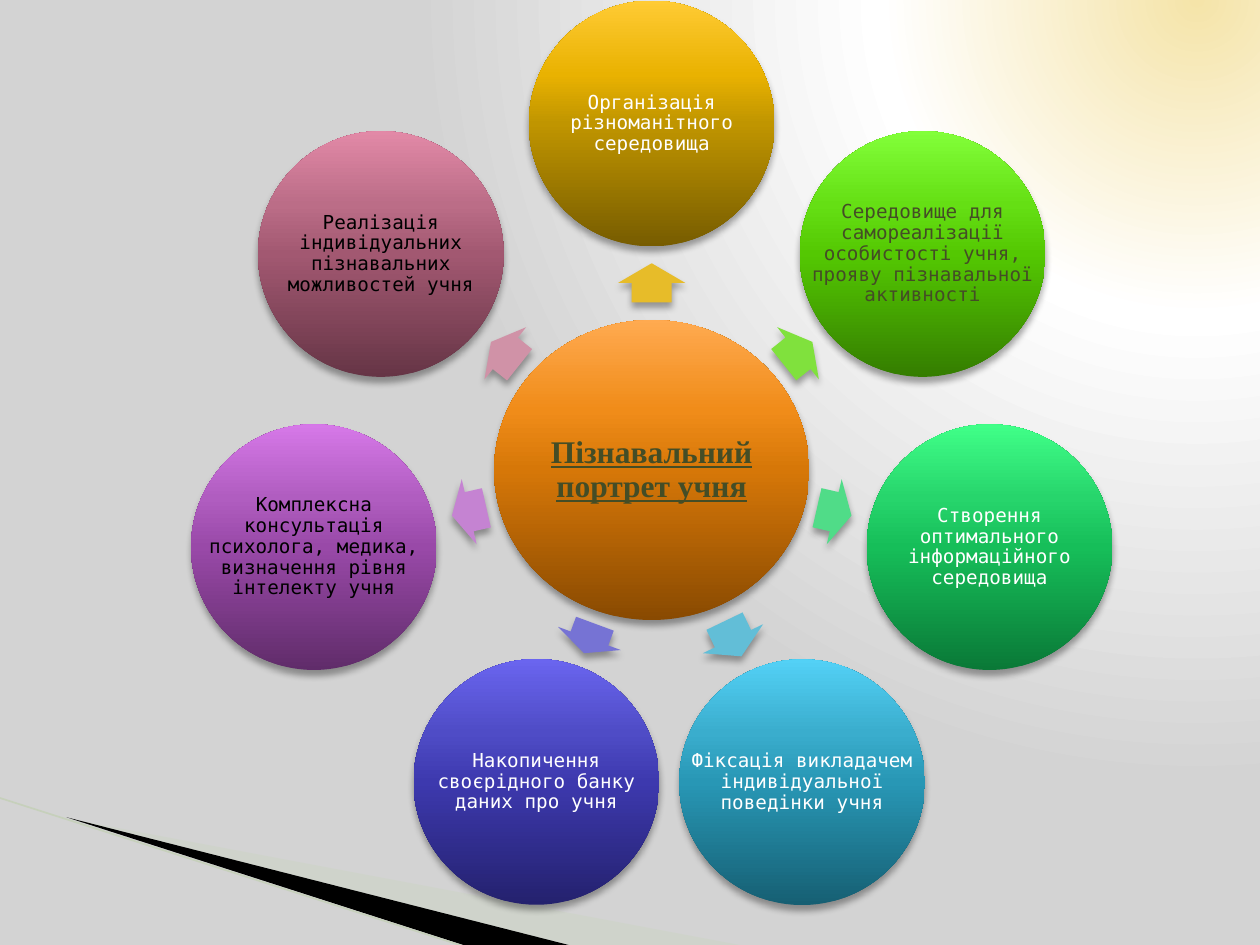
from dataclasses import dataclass
from math import cos, radians, sin

from lxml.etree import SubElement
from pptx import Presentation
from pptx.dml.color import RGBColor as RGB
from pptx.enum.shapes import MSO_CONNECTOR as CONN, MSO_SHAPE as SHAPE
from pptx.enum.text import MSO_ANCHOR as ANCHOR, PP_ALIGN as ALIGN
from pptx.oxml.ns import qn
from pptx.util import Pt


@dataclass(frozen=True)
class Theme:
    """Colours, fonts and type sizes of the slide."""
    backdrop: tuple = ((0, "F5E4A9"), (40, "FFFFFF"), (100, "D3D3D3"))
    hub_fill: tuple = ("894A01", "D67708", "F08C19", "FFAA50")
    ball_stops: tuple = (0, 50, 70, 100)
    olive: str = "444D26"
    white: str = "FFFFFF"
    black: str = "000000"
    pale: str = "CBD4C0"
    rule: str = "C6D0BB"
    hub_font: str = "Times New Roman"
    node_font: str = "DejaVu Sans Mono"
    hub_size: float = 18
    node_size: float = 11


class Deck:
    """Draws elements on the current slide; lengths are points."""

    def __init__(self, theme):
        self.theme = theme
        self.prs = Presentation()
        self.prs.slide_width, self.prs.slide_height = Pt(720), Pt(540)
        self.s = self.prs.slides.add_slide(self.prs.slide_layouts[6])

    def stops(self, element, stops):
        """Replace the gradient in an element and return it."""
        grad = next(element.iter(qn("a:gradFill")))
        for child in list(grad):
            grad.remove(child)
        gs_list = SubElement(grad, qn("a:gsLst"))
        for pos, color in stops:
            gs = SubElement(gs_list, qn("a:gs"), pos=str(pos * 1000))
            SubElement(gs, qn("a:srgbClr"), val=color)
        return grad

    def background(self):
        """Fill the background with a glow from the upper right."""
        self.s.background.fill.gradient()
        grad = self.stops(self.s.element, self.theme.backdrop)
        way = SubElement(grad, qn("a:path"), path="circle")
        SubElement(way, qn("a:fillToRect"), l="95000", t="-106000", r="5000", b="206000")

    def shadow(self, sp):
        """Give a shape a soft shadow below and no outline."""
        sp.line.fill.background()
        sp.shadow.inherit = False
        effects = sp.element.spPr.find(qn("a:effectLst"))
        outer = SubElement(effects, qn("a:outerShdw"), blurRad=str(Pt(4)), dist=str(Pt(3)),
                           dir="5400000", rotWithShape="0")
        color = SubElement(outer, qn("a:srgbClr"), val=self.theme.black)
        SubElement(color, qn("a:alpha"), val="35000")

    def wedge(self, points, color, alpha=100):
        """Draw a filled outline through the points."""
        builder = self.s.shapes.build_freeform(*points[0], scale=Pt(1))
        builder.add_line_segments(points[1:], close=True)
        sp = builder.convert_to_shape()
        sp.fill.solid()
        sp.fill.fore_color.rgb = RGB.from_string(color)
        sp.line.fill.background()
        sp.shadow.inherit = False
        if alpha < 100:
            clr = next(sp.element.spPr.iter(qn("a:srgbClr")))
            SubElement(clr, qn("a:alpha"), val=str(alpha * 1000))

    def line(self, x1, y1, x2, y2):
        """Draw a thin straight rule."""
        cn = self.s.shapes.add_connector(CONN.STRAIGHT, Pt(x1), Pt(y1), Pt(x2), Pt(y2))
        cn.line.color.rgb = RGB.from_string(self.theme.rule)
        cn.line.width = Pt(0.95)
        SubElement(cn.element.spPr, qn("a:effectLst"))

    def ball(self, cx, cy, w, h, colors):
        """Draw a shaded ellipse around a centre."""
        sp = self.s.shapes.add_shape(SHAPE.OVAL, Pt(cx - w / 2), Pt(cy - h / 2), Pt(w), Pt(h))
        sp.fill.gradient()
        grad = self.stops(sp.element.spPr, zip(self.theme.ball_stops, colors))
        SubElement(grad, qn("a:lin"), ang="16200000", scaled="0")
        self.shadow(sp)

    def label(self, cx, cy, w, h, text, font, size, color, inset=1.5, strong=False):
        """Write centred text around a centre."""
        sp = self.s.shapes.add_textbox(Pt(cx - w / 2), Pt(cy - h / 2), Pt(w), Pt(h))
        tf = sp.text_frame
        tf.word_wrap = True
        tf.vertical_anchor = ANCHOR.MIDDLE
        tf.margin_left = tf.margin_right = tf.margin_top = tf.margin_bottom = Pt(inset)
        tf.text = text
        p = tf.paragraphs[0]
        p.alignment = ALIGN.CENTER
        p.line_spacing = 0.9
        r = p.runs[0]
        r.font.name, r.font.size = font, Pt(size)
        r.font.color.rgb = RGB.from_string(color)
        if strong:
            r.font.bold = r.font.underline = True

    def arrow(self, cx, cy, w, h, angle, color):
        """Draw a block arrow turned outwards."""
        sp = self.s.shapes.add_shape(SHAPE.RIGHT_ARROW, Pt(cx - w / 2), Pt(cy - h / 2), Pt(w), Pt(h))
        sp.adjustments[0], sp.adjustments[1] = 0.6, 0.5
        sp.rotation = angle % 360
        sp.fill.solid()
        sp.fill.fore_color.rgb = RGB.from_string(color)
        self.shadow(sp)


THEME = Theme()
CENTER = (372.4, 268.6)
HUB = (180, 171.4)
BALL = 140.4
ORBIT = 198
ARROW_ORBIT = 107
ARROW_H = 38.2
STEP = 360 / 7

NODES = [
    ("Організація різноманітного середовища", THEME.white, "E7BC29", 22.3,
     ("775C00", "C09500", "E9B201", "FFCB34")),
    ("Середовище для самореалізації особистості учня, прояву пізнавальної активності",
     THEME.olive, "80E13D", 20.9, ("347D00", "54C802", "65DF14", "82FF39")),
    ("Створення оптимального інформаційного середовища", THEME.white, "50DC88", 20.2,
     ("0A7937", "16BE59", "27D56C", "40FF88")),
    ("Фіксація викладачем індивідуальної поведінки учня", THEME.white, "62BED7", 22.3,
     ("165F73", "2897B5", "3AADCD", "53D1F6")),
    ("Накопичення своєрідного банку даних про учня", THEME.white, "7673D4", 18,
     ("24216E", "3D39AE", "4F4CC6", "6A65EF")),
    ("Комплексна консультація психолога, медика, визначення рівня інтелекту учня",
     THEME.black, "C583D2", 20.2, ("602C6A", "9949A8", "B05DC0", "D678E8")),
    ("Реалізація індивідуальних пізнавальних можливостей учня", THEME.black, "D092A7", 20.9,
     ("663546", "A25871", "BB6D87", "E289A7")),
]
SHIFTED = {4: (110.3, 190, 102.6)}


def around(angle, radius):
    """Return the point at an angle and radius from the hub."""
    a = radians(angle)
    return CENTER[0] + radius * cos(a), CENTER[1] + radius * sin(a)


def main():
    """Build and save the slide."""
    deck = Deck(THEME)
    deck.background()
    deck.wedge([(39.6, 468.4), (428.4, 540.7), (328.3, 540.7)], THEME.pale, 40)
    deck.wedge([(38.2, 467.3), (329, 540.7), (267.8, 541.4)], THEME.black)
    deck.line(-0.7, 455.8, 267.1, 541.4)

    deck.ball(*CENTER, *HUB, THEME.hub_fill)
    deck.label(*CENTER, *HUB, "Пізнавальний портрет учня", THEME.hub_font, THEME.hub_size,
               THEME.olive, inset=2, strong=True)
    for i, (text, ink, arrow_color, arrow_w, colors) in enumerate(NODES):
        regular = (i * STEP - 90, ORBIT, ARROW_ORBIT)
        angle, orbit, arrow_orbit = SHIFTED.get(i, regular)
        deck.arrow(*around(angle, arrow_orbit), arrow_w, ARROW_H, angle, arrow_color)
        spot = around(angle, orbit)
        deck.ball(*spot, BALL, BALL, colors)
        deck.label(*spot, BALL, BALL, text, THEME.node_font, THEME.node_size, ink)
    deck.prs.save("out.pptx")


if __name__ == "__main__":
    main()
